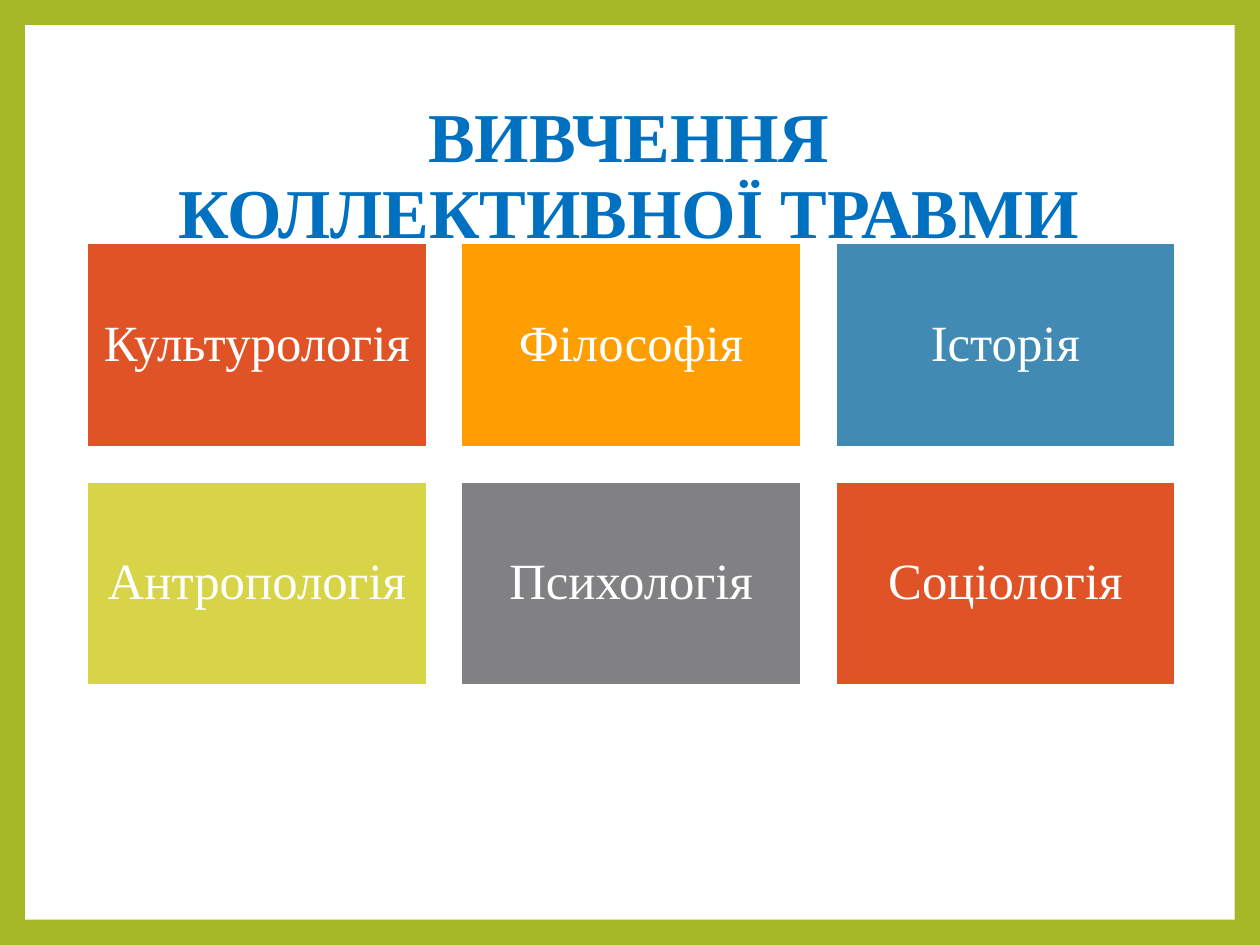
"""Build a slide listing the disciplines that study collective trauma."""
from dataclasses import dataclass

from pptx import Presentation
from pptx.dml.color import RGBColor
from pptx.enum.shapes import MSO_SHAPE
from pptx.enum.text import MSO_ANCHOR, PP_ALIGN
from pptx.util import Inches, Pt

WHITE = "FFFFFF"
COLUMNS = 3
GRID_LEFT, GRID_TOP = 0.69, 1.93
CARD_WIDTH, CARD_HEIGHT = 2.7, 1.62
GAP = 0.27


@dataclass
class Discipline:
    name: str
    fill: str


DISCIPLINES = [
    Discipline("Культурологія", "DF5327"),
    Discipline("Філософія", "FE9E00"),
    Discipline("Історія", "418AB3"),
    Discipline("Антропологія", "D7D447"),
    Discipline("Психологія", "818183"),
    Discipline("Соціологія", "DF5327"),
]


def color(value: str) -> RGBColor:
    return RGBColor.from_string(value)


def set_attributes(target, values: dict) -> None:
    for name, value in values.items():
        setattr(target, name, value)


def paint(fill, value: str) -> None:
    fill.solid()
    fill.fore_color.rgb = color(value)


def write_text(shape, text: str, size: float, text_color: str, bold: bool, inset: float) -> None:
    frame = shape.text_frame
    set_attributes(frame, {
        "word_wrap": True,
        "vertical_anchor": MSO_ANCHOR.MIDDLE,
        "margin_left": Inches(inset),
        "margin_right": Inches(inset),
        "margin_top": Inches(inset),
        "margin_bottom": Inches(inset),
    })
    paragraph = frame.paragraphs[0]
    set_attributes(paragraph, {"text": text, "alignment": PP_ALIGN.CENTER, "line_spacing": 0.9})
    font = paragraph.runs[0].font
    set_attributes(font, {"name": "Times New Roman", "size": Pt(size), "bold": bold})
    font.color.rgb = color(text_color)


def add_rectangle(slide, left: float, top: float, width: float, height: float, fill: str):
    shape = slide.shapes.add_shape(
        MSO_SHAPE.RECTANGLE, Inches(left), Inches(top), Inches(width), Inches(height))
    shape.shadow.inherit = False
    paint(shape.fill, fill)
    shape.line.fill.background()
    return shape


def add_title(slide, text: str) -> None:
    title = slide.shapes.add_textbox(Inches(0.94), Inches(0.67), Inches(8.1), Inches(1.48))
    write_text(title, text, size=40, text_color="0070C0", bold=True, inset=0.1)


def add_card(slide, index: int, discipline: Discipline) -> None:
    row, column = divmod(index, COLUMNS)
    left = GRID_LEFT + column * (CARD_WIDTH + GAP)
    top = GRID_TOP + row * (CARD_HEIGHT + GAP)
    card = add_rectangle(slide, left, top, CARD_WIDTH, CARD_HEIGHT, discipline.fill)
    card.line.color.rgb = color(WHITE)
    card.line.width = Pt(1.5)
    write_text(card, discipline.name, size=29, text_color=WHITE, bold=False, inset=0.12)


def main() -> None:
    presentation = Presentation()
    set_attributes(presentation, {"slide_width": Inches(10), "slide_height": Inches(7.5)})
    slide = presentation.slides.add_slide(presentation.slide_layouts[6])
    paint(slide.background.fill, "A6B727")
    add_rectangle(slide, 0.2, 0.2, 9.6, 7.1, WHITE)
    add_title(slide, "ВИВЧЕННЯ КОЛЛЕКТИВНОЇ ТРАВМИ")
    for index, discipline in enumerate(DISCIPLINES):
        add_card(slide, index, discipline)
    presentation.save("out.pptx")


if __name__ == "__main__":
    main()
